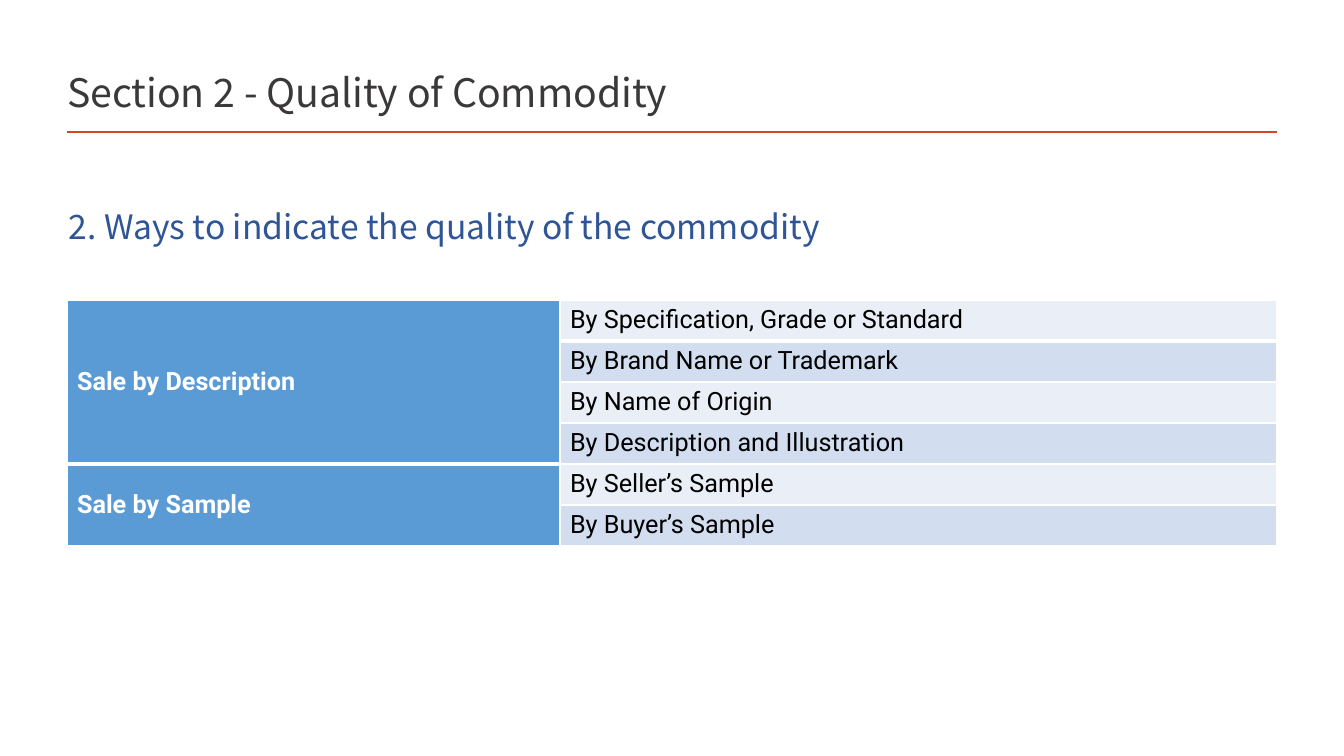
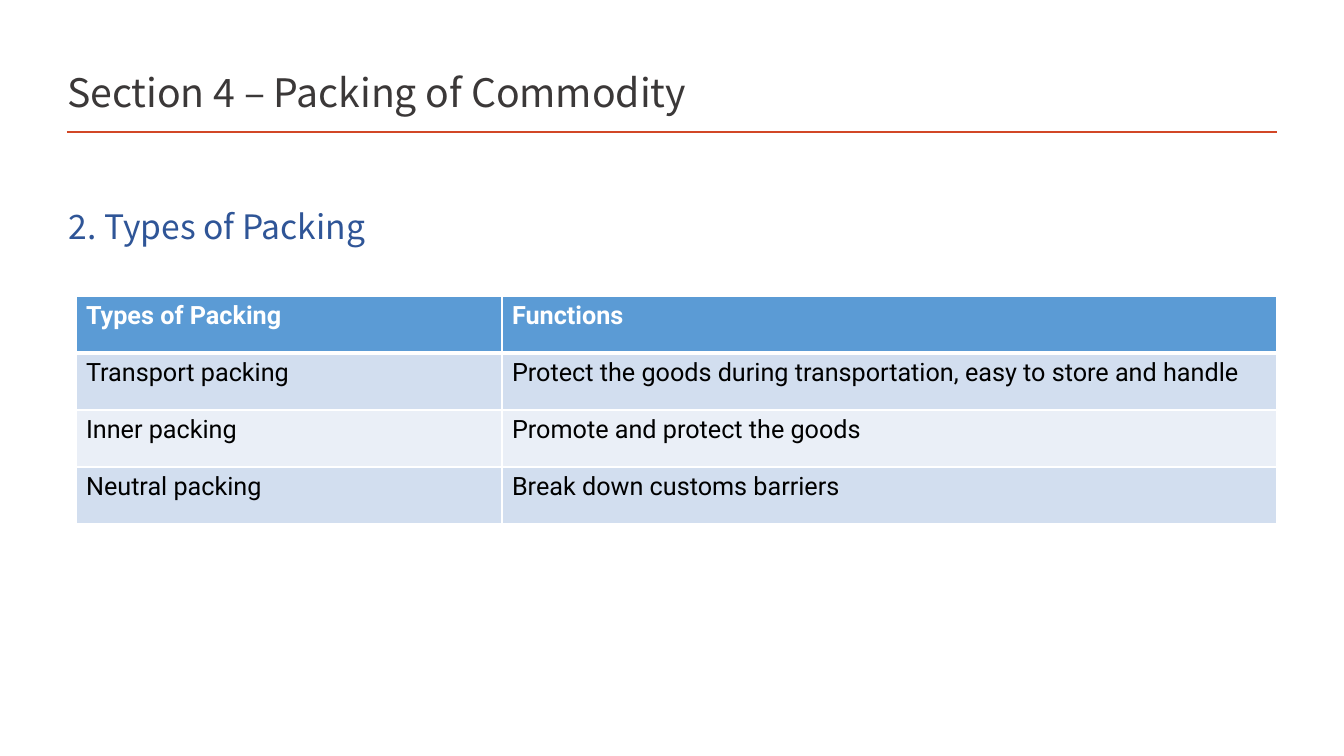
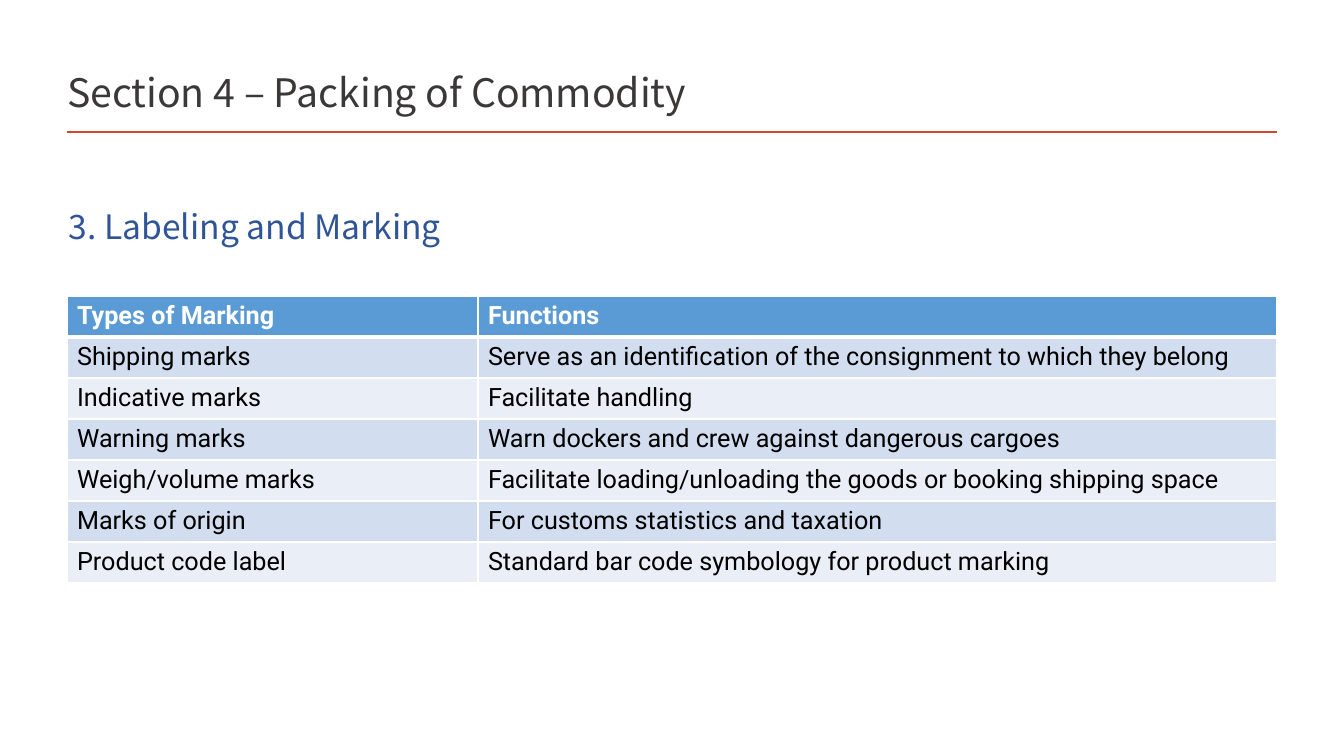
from lxml import etree
from pptx import Presentation
from pptx import util as u
from pptx.dml.color import RGBColor
from pptx.enum import shapes, text
from pptx.oxml.ns import qn

SCALE = 914400 / 100.8
LEFT, RIGHT = 67, 1277
SANS, BODY = "Noto Sans CJK SC", "Roboto"
WHITE, BLACK, DARK = "FFFFFF", "000000", "3B3838"
RED, NAVY, BLUE = "D24726", "2F5597", "5B9BD5"
BANDS = ("EAEFF7", "D2DEEF")


def px(n):
    return u.Emu(round(n * SCALE))


def color(code):
    return RGBColor.from_string(code)


def style(para, font, size, code, bold=False):
    para.alignment = text.PP_ALIGN.LEFT
    para.font.name = font
    para.font.size = u.Pt(size)
    para.font.bold = bold
    para.font.color.rgb = color(code)


def title(slide, words):
    box = slide.shapes.title
    box.left, box.top, box.width, box.height = map(px, (57, 49, 932, 71))
    frame = box.text_frame
    frame.text = words
    frame.auto_size = text.MSO_AUTO_SIZE.NONE
    frame.vertical_anchor = text.MSO_ANCHOR.BOTTOM
    style(frame.paragraphs[0], SANS, 28, DARK)


def rule(slide):
    line = slide.shapes.add_connector(
        shapes.MSO_CONNECTOR.STRAIGHT, px(LEFT), px(132), px(RIGHT), px(132))
    line.line.color.rgb = color(RED)
    line.line.width = u.Pt(2)
    etree.SubElement(line.element.spPr, qn("a:effectLst"))


def topic(slide, words):
    box = slide.shapes.add_textbox(px(59), px(216), px(1218), px(80))
    frame = box.text_frame
    frame.word_wrap = True
    frame.text = words
    para = frame.paragraphs[0]
    para.line_spacing = u.Pt(18)
    para.space_after = u.Pt(6)
    style(para, SANS, 24, NAVY)


def edges(cell, base):
    props = cell._tc.get_or_add_tcPr()
    for side, width in (("L", 1), ("R", 1), ("T", 1), ("B", base)):
        line = etree.SubElement(props, qn("a:ln" + side), w=str(u.Pt(width)))
        fill = etree.SubElement(line, qn("a:solidFill"))
        etree.SubElement(fill, qn("a:srgbClr"), val=WHITE)


def grid(slide, top, split, high, rows, left=LEFT, spans=()):
    frame = slide.shapes.add_table(
        len(rows), 2, px(left), px(top), px(RIGHT - left), px(high * len(rows)))
    table = frame.table
    table.first_row = table.horz_banding = False
    for col, width in zip(table.columns, (split, RIGHT - left - split)):
        col.width = px(width)
    for r, row in enumerate(rows):
        table.rows[r].height = px(high)
        for c, words in enumerate(row):
            cell = table.cell(r, c)
            head = c == 0 if spans else r == 0
            edges(cell, 3 if r == 0 else 1)
            cell.fill.solid()
            cell.fill.fore_color.rgb = color(BLUE if head else BANDS[r % 2])
            cell.text = words
            style(cell.text_frame.paragraphs[0], BODY, 18,
                  WHITE if head else BLACK, head)
    for first, last in spans:
        cell = table.cell(first, 0)
        cell.merge(table.cell(last, 0))
        cell.vertical_anchor = text.MSO_ANCHOR.MIDDLE


def page(deck, name, head):
    slide = deck.slides.add_slide(deck.slide_layouts[5])
    rule(slide)
    title(slide, name)
    topic(slide, head)
    return slide


def main():
    deck = Presentation()
    deck.slide_width, deck.slide_height = px(1344), px(756)
    packing = "Section 4 – Packing of Commodity"

    slide = page(deck, "Section 2 - Quality of Commodity",
                 "2. Ways to indicate the quality of the commodity")
    grid(slide, 300, 493, 41, [
        ("Sale by Description", "By Specification, Grade or Standard"),
        ("", "By Brand Name or Trademark"),
        ("", "By Name of Origin"),
        ("", "By Description and Illustration"),
        ("Sale by Sample", "By Seller’s Sample"),
        ("", "By Buyer’s Sample"),
    ], spans=((0, 3), (4, 5)))

    slide = page(deck, packing, "2. Types of Packing")
    grid(slide, 296, 426, 57, [
        ("Types of Packing", "Functions"),
        ("Transport packing",
         "Protect the goods during transportation, easy to store and handle"),
        ("Inner packing", "Promote and protect the goods"),
        ("Neutral packing", "Break down customs barriers"),
    ], left=76)

    slide = page(deck, packing, "3. Labeling and Marking")
    grid(slide, 296, 411, 41, [
        ("Types of Marking", "Functions"),
        ("Shipping marks",
         "Serve as an identification of the consignment to which they belong"),
        ("Indicative marks", "Facilitate handling"),
        ("Warning marks", "Warn dockers and crew against dangerous cargoes"),
        ("Weigh/volume marks",
         "Facilitate loading/unloading the goods or booking shipping space"),
        ("Marks of origin", "For customs statistics and taxation"),
        ("Product code label",
         "Standard bar code symbology for product marking"),
    ])
    deck.save("out.pptx")


if __name__ == "__main__":
    main()
